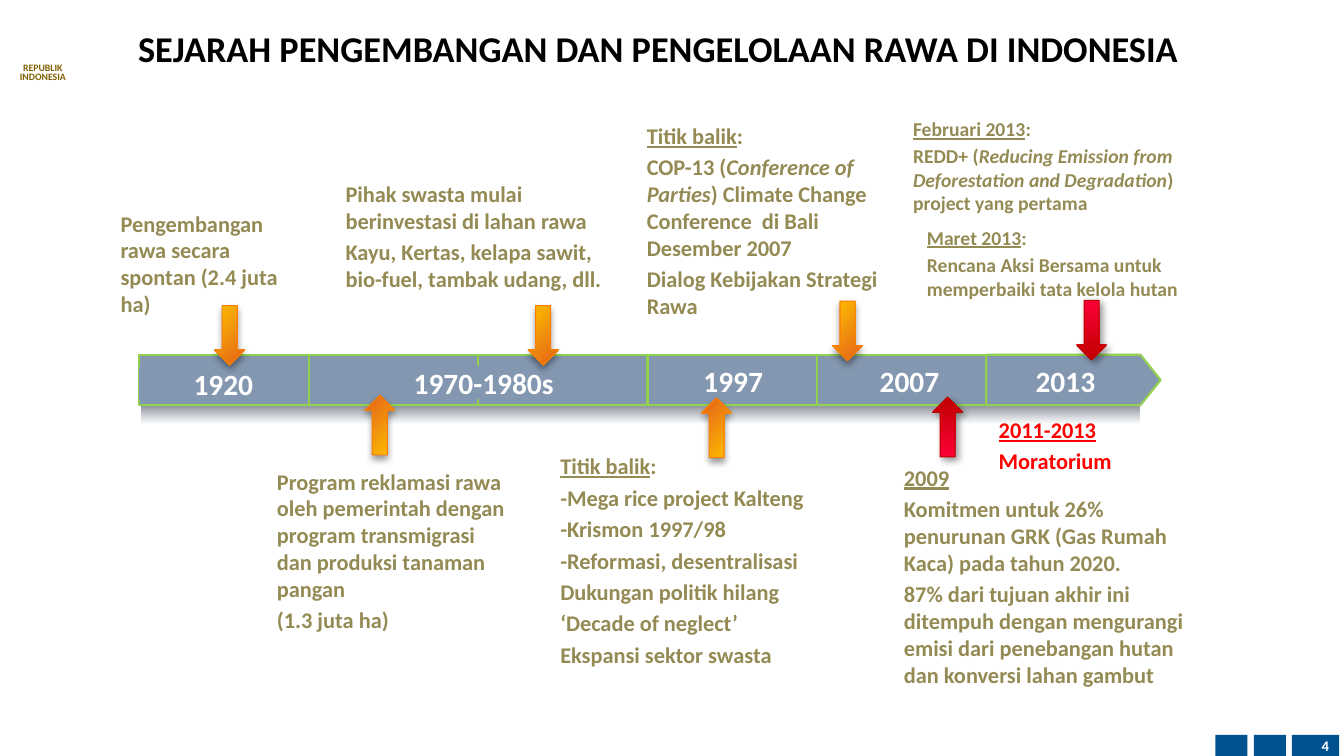
"""Build a timeline slide on the history of swamp development in Indonesia."""
import dataclasses

import lxml.etree
import pptx
import pptx.dml.color
import pptx.enum.shapes
import pptx.enum.text
import pptx.oxml.ns
import pptx.util

Cm = pptx.util.Cm
Pt = pptx.util.Pt
Shape = pptx.enum.shapes.MSO_SHAPE
Align = pptx.enum.text.PP_ALIGN
Anchor = pptx.enum.text.MSO_ANCHOR
AutoSize = pptx.enum.text.MSO_AUTO_SIZE


@dataclasses.dataclass(frozen=True)
class Theme:
    """Colours and type sizes of the slide."""
    font: str = "Calibri"
    title: str = "000000"
    navy: str = "00518F"
    emblem: str = "806000"
    band: str = "8497B0"
    band_line: str = "92D050"
    note: str = "948A54"
    alert: str = "FF0000"
    white: str = "FFFFFF"
    shade: tuple = ("060B14", "44546A")
    orange: tuple = ("FFC000", "E36119", "FC7E00")
    red: tuple = ("FB0036", "C00000", "C00000")
    title_size: float = 25.9
    year_size: float = 21
    note_size: float = 16
    small_size: float = 14
    number_size: float = 10.5
    emblem_size: float = 7


THEME = Theme()


def rgb(color):
    """Return a colour object for a hex string."""
    return pptx.dml.color.RGBColor.from_string(color)


def add_child(parent, tag, **attributes):
    """Append a drawing element with the given attributes."""
    child = lxml.etree.SubElement(parent, pptx.oxml.ns.qn(tag))
    for name, value in attributes.items():
        child.set(name, str(value))
    return child


def write_text(shape, paragraphs, size=THEME.note_size, color=THEME.note,
               align=Align.LEFT, anchor=Anchor.TOP, line_spacing=None):
    """Fill a shape with paragraphs, each a string or (text, style) runs."""
    frame = shape.text_frame
    frame.word_wrap = True
    frame.vertical_anchor = anchor
    for index, runs in enumerate(paragraphs):
        paragraph = frame.paragraphs[0] if index == 0 else frame.add_paragraph()
        paragraph.alignment = align
        paragraph.space_before = Pt(size * 0.2 if index else 0)
        if line_spacing is not None:
            paragraph.line_spacing = line_spacing
        for text, style in [(runs, "")] if isinstance(runs, str) else runs:
            run = paragraph.add_run()
            run.text = text
            run.font.name = THEME.font
            run.font.size = Pt(size)
            run.font.bold = True
            run.font.italic = style == "italic"
            run.font.underline = style == "underline"
            run.font.color.rgb = rgb(color)


def add_text(slide, box, paragraphs, grow=False, **text_format):
    """Add a text box at (left, top, width, height) in centimetres."""
    shape = slide.shapes.add_textbox(*map(Cm, box))
    write_text(shape, paragraphs, **text_format)
    if grow:
        shape.text_frame.auto_size = AutoSize.SHAPE_TO_FIT_TEXT


def add_block(slide, box, fill, line=None, kind=Shape.RECTANGLE):
    """Add a solid shape with an optional outline."""
    shape = slide.shapes.add_shape(kind, *map(Cm, box))
    shape.shadow.inherit = False
    shape.fill.solid()
    shape.fill.fore_color.rgb = rgb(fill)
    if line:
        shape.line.color.rgb = rgb(line)
        shape.line.width = Pt(1.5)
    else:
        shape.line.fill.background()
    return shape


def fill_gradient(shape, colors, clockwise):
    """Fill a shape with a two-colour gradient at a clockwise angle."""
    shape.fill.gradient()
    shape.fill.gradient_angle = 360 - clockwise
    for stop, position, color in zip(shape.fill.gradient_stops, (0, 1), colors):
        stop.position = position
        stop.color.rgb = rgb(color)


def add_band_shade(slide):
    """Add the shade that fades out below the timeline."""
    shape = add_block(slide, (3.56, 9.78, 25.17, 0.89), THEME.shade[0])
    fill_gradient(shape, THEME.shade, 90)
    colors = list(shape._element.spPr.iter(pptx.oxml.ns.qn("a:srgbClr")))
    add_child(colors[-1], "a:alpha", val=0)


def add_timeline(slide):
    """Add the segments of the band and the year labels on it."""
    left, top, step, height = 3.51, 8.94, 4.27, 1.27
    tip = add_block(slide, (left + 5 * step, top, 4.39, height), THEME.band,
                    THEME.band_line, Shape.PENTAGON)
    tip.adjustments[0] = 0.4
    for index in range(5):
        add_block(slide, (left + index * step, top, step, height),
                  THEME.band, THEME.band_line)
    for year, box in (
        ("1970-1980s", (8.33, 9.22, 7.72, 0.84)),
        ("1997", (16.59, 9.25, 3.78, 0.71)),
        ("2007", (21.03, 9.14, 3.78, 0.89)),
        ("1920", (3.51, 9.25, 4.24, 0.84)),
        ("2013", (25.3, 9.25, 3.1, 0.71)),
    ):
        write_text(add_block(slide, box, THEME.band), [year],
                   size=THEME.year_size, color=THEME.white,
                   align=Align.CENTER, anchor=Anchor.MIDDLE)


def add_arrow(slide, left, top, colors, angle, shadow_angle, up=False):
    """Add a block arrow with a gradient fill and a soft shadow."""
    shape = add_block(slide, (left, top, 0.76, 1.5), colors[0], colors[2],
                      Shape.DOWN_ARROW)
    shape.line.width = Pt(0.75)
    shape.rotation = 180 if up else 0
    fill_gradient(shape, colors, angle)
    effects = shape._element.spPr.find(pptx.oxml.ns.qn("a:effectLst"))
    shadow = add_child(effects, "a:outerShdw", blurRad=Pt(5), dist=Pt(3),
                       dir=shadow_angle * 60000, rotWithShape=0)
    add_child(add_child(shadow, "a:srgbClr", val="000000"), "a:alpha", val=40000)


def add_notes_on_events(slide):
    """Add the texts above and below the timeline."""
    turning_point = [("Titik balik", "underline"), (":", "")]
    for box, paragraphs in (
        ((2.79, 5.16, 5, 3), ["Pengembangan rawa secara spontan (2.4 juta ha)"]),
        ((8.46, 4.42, 7.37, 3.12), [
            "Pihak swasta mulai berinvestasi di lahan rawa",
            "Kayu, Kertas, kelapa sawit, bio-fuel, tambak udang, dll."]),
        ((16.05, 2.95, 6.93, 5.31), [
            turning_point,
            [("COP-13 (", ""), ("Conference of Parties", "italic"),
             (") Climate Change Conference  di Bali Desember 2007", "")],
            "Dialog Kebijakan Strategi Rawa"]),
        ((6.73, 11.66, 6.32, 4.5), [
            "Program reklamasi rawa oleh pemerintah dengan program "
            "transmigrasi dan produksi tanaman pangan",
            "(1.3 juta ha)"]),
        ((13.87, 11.28, 7.95, 5.87), [
            turning_point, "-Mega rice project Kalteng", "-Krismon 1997/98",
            "-Reformasi, desentralisasi", "Dukungan politik hilang",
            "‘Decade of neglect’", "Ekspansi sektor swasta"]),
        ((22.53, 11.56, 7.8, 5.99), [
            [("2009", "underline")],
            "Komitmen untuk 26% penurunan GRK (Gas Rumah Kaca) pada tahun 2020.",
            "87% dari tujuan akhir ini ditempuh dengan mengurangi emisi dari "
            "penebangan hutan dan konversi lahan gambut"]),
    ):
        add_text(slide, box, paragraphs, grow=True)
    for box, paragraphs in (
        ((23.11, 5.56, 7.44, 2.16), [
            [("Maret 2013", "underline"), (":", "")],
            "Rencana Aksi Bersama untuk memperbaiki tata kelola hutan"]),
        ((22.76, 2.82, 8.03, 2.77), [
            [("Februari 2013", "underline"), (":", "")],
            [("REDD+ (", ""),
             ("Reducing Emission from Deforestation and Degradation", "italic"),
             (") project yang pertama", "")]]),
    ):
        add_text(slide, box, paragraphs, grow=True, size=THEME.small_size)
    add_text(slide, (24.92, 10.36, 4.01, 1.75),
             [[("2011-2013", "underline")], "Moratorium"],
             grow=True, color=THEME.alert)


def main():
    """Build the slide and save it."""
    presentation = pptx.Presentation()
    presentation.slide_width, presentation.slide_height = Cm(33.87), Cm(19.05)
    slide = presentation.slides.add_slide(presentation.slide_layouts[6])
    for left, width in ((32.56, 1.19), (30.63, 0.81), (31.6, 0.81)):
        add_block(slide, (left, 18.52, width, 0.55), THEME.navy)
    add_text(slide, (0.13, 1.47, 1.9, 0.76), ["REPUBLIK INDONESIA"], grow=True,
             size=THEME.emblem_size, color=THEME.emblem, align=Align.CENTER,
             line_spacing=Pt(7))
    add_text(slide, (32.39, 18.52, 1.35, 0.55), ["4"], size=THEME.number_size,
             color=THEME.white, align=Align.RIGHT, anchor=Anchor.MIDDLE)
    add_text(slide, (2.84, 0.36, 27.51, 1.83),
             ["SEJARAH PENGEMBANGAN DAN PENGELOLAAN RAWA DI INDONESIA"],
             size=THEME.title_size, color=THEME.title, align=Align.CENTER,
             anchor=Anchor.MIDDLE, line_spacing=0.9)
    add_band_shade(slide)
    add_timeline(slide)
    add_notes_on_events(slide)
    for left, top, up in ((5.41, 7.7, False), (13.31, 7.7, False),
                          (20.98, 7.59, False), (9.19, 9.96, True),
                          (17.68, 10.03, True)):
        add_arrow(slide, left, top, THEME.orange, 45, 90, up)
    for left, top, up in ((27.13, 7.57, False), (23.5, 10.01, True)):
        add_arrow(slide, left, top, THEME.red, 90, 45, up)
    presentation.save("out.pptx")


if __name__ == "__main__":
    main()
